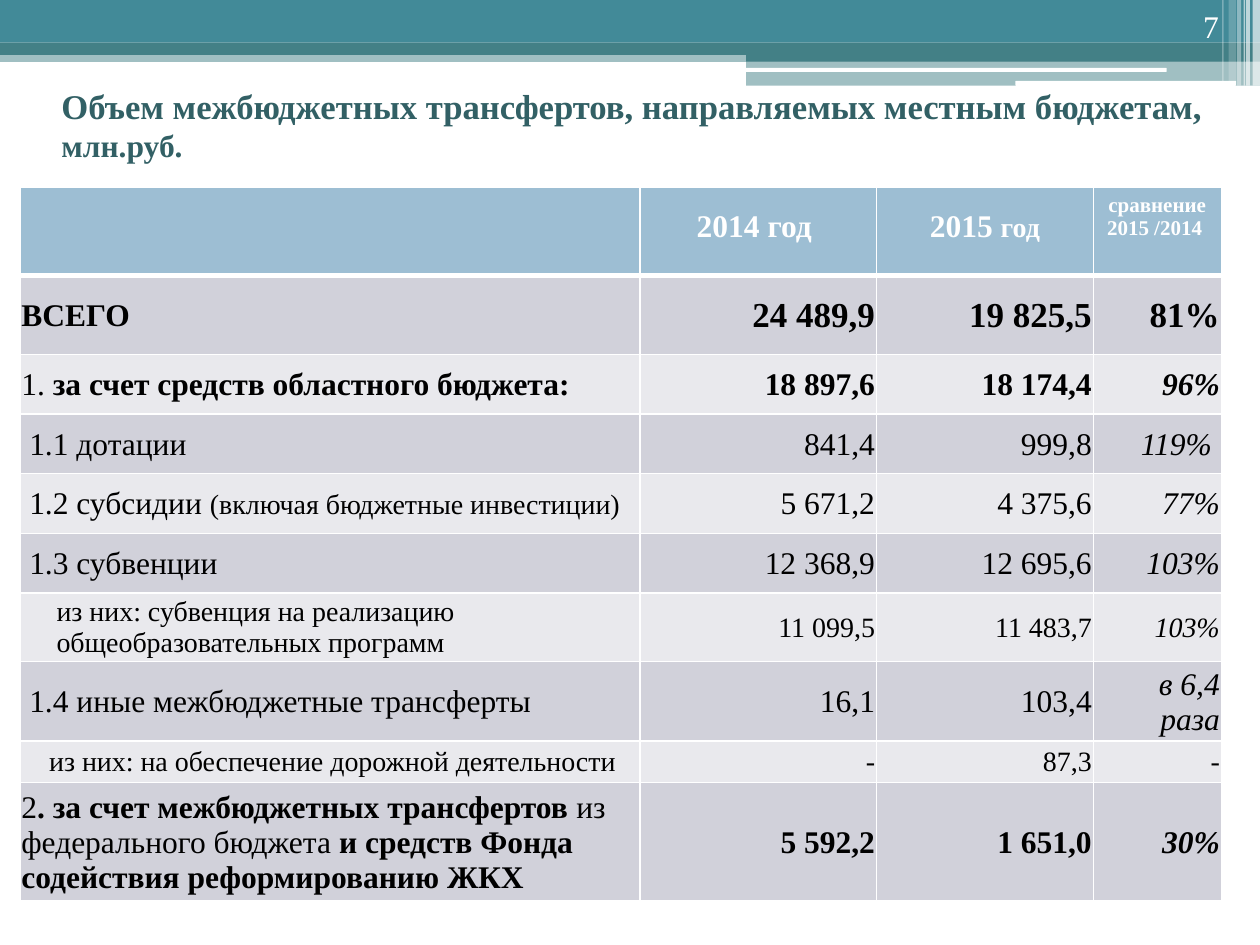
import lxml.etree
import pptx
import pptx.dml.color
import pptx.enum.shapes
import pptx.enum.text
import pptx.oxml.ns
import pptx.util

Cm = pptx.util.Cm
Pt = pptx.util.Pt
ALIGN = pptx.enum.text.PP_ALIGN
ANCHOR = pptx.enum.text.MSO_ANCHOR
SHAPE = pptx.enum.shapes.MSO_SHAPE
FONT = "Times New Roman"
TEAL, WHITE, BLACK, TITLE = "438086", "FFFFFF", "000000", "326065"
HEADER, BANDS = "9DBED3", ("D1D1DA", "E9E9ED")

BARS = [
    (0, 1.02, 25.4, 0.23, TEAL, 50),
    (0, 0, 25.4, 0.86, "428A98", 100),
    (0, 0.86, 25.4, 0.25, TEAL, 100),
    (15.04, 0.99, 10.36, 0.25, TEAL, 100),
    (15.04, 1.22, 10.36, 0.51, TEAL, 50),
]
ROUNDED_LINES = [(15.01, 1.37, 8.51, 0.08), (20.47, 1.63, 4.45, 0.1)]
STRIPES = [
    (25.25, 0.15, 1.73, 65),
    (25.12, 0.08, 1.73, 65),
    (25.07, 0.03, 1.73, 60),
    (24.94, 0.08, 1.73, 40),
    (24.77, 0.15, 1.63, 20),
    (24.64, 0.03, 1.63, 30),
]

COLUMN_WIDTHS = (12.5, 4.77, 4.37, 2.58)
HEADER_HEIGHT = 1.77
HEADERS = [
    ([], 0.13),
    ([("2014 год ", 18, True)], 0.45),
    ([("2015 ", 18, True), ("год", 16, True)], 0.45),
    ([("сравнение 2015 /2014 ", 12, True)], 0.13),
]
# Each row: height, indent, label paragraphs, values, value size, bold, italic share
ROWS = [
    (1.6, 0, [[("ВСЕГО", 18, True)]],
     ("24 489,9", "19 825,5", "81%"), 20, True, False),
    (1.2, 0, [[("1. ", 18, False), ("за счет средств областного бюджета:", 18, True)]],
     ("18 897,6", "18 174,4", "96%"), 18, True, True),
    (1.2, 0.16, [[("1.1 дотации", 18, False)]],
     ("841,4", "999,8", "119% "), 18, False, True),
    (1.2, 0.16, [[("1.2 субсидии ", 18, False), ("(включая бюджетные инвестиции)", 16, False)]],
     ("5 671,2", "4 375,6", "77%"), 18, False, True),
    (1.2, 0.16, [[("1.3 субвенции", 18, False)]],
     ("12 368,9", "12 695,6", "103%"), 18, False, True),
    (1.2, 0.71, [[("из них: субвенция на реализацию", 16, False)],
                 [("общеобразовательных программ", 16, False)]],
     ("11 099,5", "11 483,7", "103%"), 16, False, True),
    (1.6, 0.16, [[("1.4 иные межбюджетные трансферты", 18, False)]],
     ("16,1", "103,4", "в 6,4 раза"), 18, False, True),
    (0.84, 0.56, [[("из них: на обеспечение дорожной деятельности", 16, False)]],
     ("-", "87,3", "-"), 16, False, True),
    (2.39, 0, [[("2", 18, False), (". за счет межбюджетных трансфертов ", 18, True),
                ("из федерального бюджета ", 18, False),
                ("и средств Фонда содействия реформированию ЖКХ", 18, True)]],
     ("5 592,2", "1 651,0", "30%"), 18, True, True),
]


def rgb(value):
    """Turn a hex string into a colour."""
    return pptx.dml.color.RGBColor.from_string(value)


def add_bar(slide, left, top, width, height, color, opacity=100, kind=SHAPE.RECTANGLE):
    """Add a borderless filled shape with the given opacity in percent."""
    shape = slide.shapes.add_shape(kind, Cm(left), Cm(top), Cm(width), Cm(height))
    shape.shadow.inherit = False
    shape.line.fill.background()
    shape.fill.solid()
    shape.fill.fore_color.rgb = rgb(color)
    if opacity < 100:
        color_element = shape.fill._xPr.find(".//" + pptx.oxml.ns.qn("a:srgbClr"))
        lxml.etree.SubElement(color_element, pptx.oxml.ns.qn("a:alpha"), val=str(opacity * 1000))


def write(text_frame, paragraphs, color, alignment=ALIGN.LEFT, italic=False):
    """Write paragraphs made of (text, size, bold) runs."""
    text_frame.word_wrap = True
    for index, runs in enumerate(paragraphs):
        paragraph = text_frame.add_paragraph() if index else text_frame.paragraphs[0]
        paragraph.alignment = alignment
        for text, size, bold in runs:
            run = paragraph.add_run()
            run.text = text
            run.font.name = FONT
            run.font.size = Pt(size)
            run.font.bold = bold
            run.font.italic = italic
            run.font.color.rgb = rgb(color)


def add_text(slide, left, top, width, height, runs, color, alignment, anchor):
    """Add a one-paragraph text box."""
    box = slide.shapes.add_textbox(Cm(left), Cm(top), Cm(width), Cm(height))
    box.text_frame.vertical_anchor = anchor
    write(box.text_frame, [runs], color, alignment)


def style_cell(cell, color, top=1, bottom=1):
    """Fill a cell and give it white borders."""
    cell.fill.solid()
    cell.fill.fore_color.rgb = rgb(color)
    properties = cell._tc.get_or_add_tcPr()
    widths = {"a:lnL": 1, "a:lnR": 1, "a:lnT": top, "a:lnB": bottom}
    for index, (tag, width) in enumerate(widths.items()):
        line = lxml.etree.Element(pptx.oxml.ns.qn(tag), w=str(Pt(width)))
        fill = lxml.etree.SubElement(line, pptx.oxml.ns.qn("a:solidFill"))
        lxml.etree.SubElement(fill, pptx.oxml.ns.qn("a:srgbClr"), val=WHITE)
        properties.insert(index, line)


def fill_body_cell(cell, paragraphs, alignment, indent=0, italic=False):
    """Write a body cell with narrow margins."""
    cell.vertical_anchor = ANCHOR.MIDDLE
    cell.margin_left = Cm(0.03 + indent)
    cell.margin_right = cell.margin_top = Cm(0.03)
    cell.margin_bottom = 0
    write(cell.text_frame, paragraphs, BLACK, alignment, italic)


def add_transfers_table(slide):
    """Add the table of transfers by year."""
    heights = [HEADER_HEIGHT] + [row[0] for row in ROWS]
    table = slide.shapes.add_table(
        len(heights), len(COLUMN_WIDTHS), Cm(0.4), Cm(3.78),
        Cm(sum(COLUMN_WIDTHS)), Cm(sum(heights))).table
    table.horz_banding = False
    for column, width in zip(table.columns, COLUMN_WIDTHS):
        column.width = Cm(width)
    for row, height in zip(table.rows, heights):
        row.height = Cm(height)
    for cell, (runs, margin) in zip(table.rows[0].cells, HEADERS):
        style_cell(cell, HEADER, bottom=3)
        cell.margin_top = Cm(margin)
        write(cell.text_frame, [runs], WHITE, ALIGN.CENTER)
    for index, (_, indent, label, values, size, bold, italic) in enumerate(ROWS):
        cells = list(table.rows[index + 1].cells)
        for cell in cells:
            style_cell(cell, BANDS[index % 2], top=1 if index else 3)
        fill_body_cell(cells[0], label, ALIGN.LEFT, indent)
        for cell, value in zip(cells[1:], values):
            fill_body_cell(cell, [[(value, size, bold)]], ALIGN.RIGHT,
                           italic=italic and cell is cells[-1])


def main():
    """Build the slide and save it."""
    presentation = pptx.Presentation()
    presentation.slide_width, presentation.slide_height = Cm(25.4), Cm(19.05)
    slide = presentation.slides.add_slide(presentation.slide_layouts[6])
    for bar in BARS:
        add_bar(slide, *bar)
    for line in ROUNDED_LINES:
        add_bar(slide, *line, WHITE, kind=SHAPE.ROUNDED_RECTANGLE)
    for left, width, height, opacity in STRIPES:
        add_bar(slide, left, 0, width, height, WHITE, opacity)
    title = [("Объем межбюджетных трансфертов, направляемых местным бюджетам, ", 19.8, True),
             ("млн.руб.", 18, True)]
    add_text(slide, 0.99, 1.62, 23.85, 1.78, title, TITLE, ALIGN.LEFT, ANCHOR.MIDDLE)
    add_text(slide, 22.71, 0, 2.11, 1.02, [("7", 18, False)], WHITE, ALIGN.RIGHT, ANCHOR.BOTTOM)
    add_transfers_table(slide)
    presentation.save("out.pptx")


if __name__ == "__main__":
    main()
